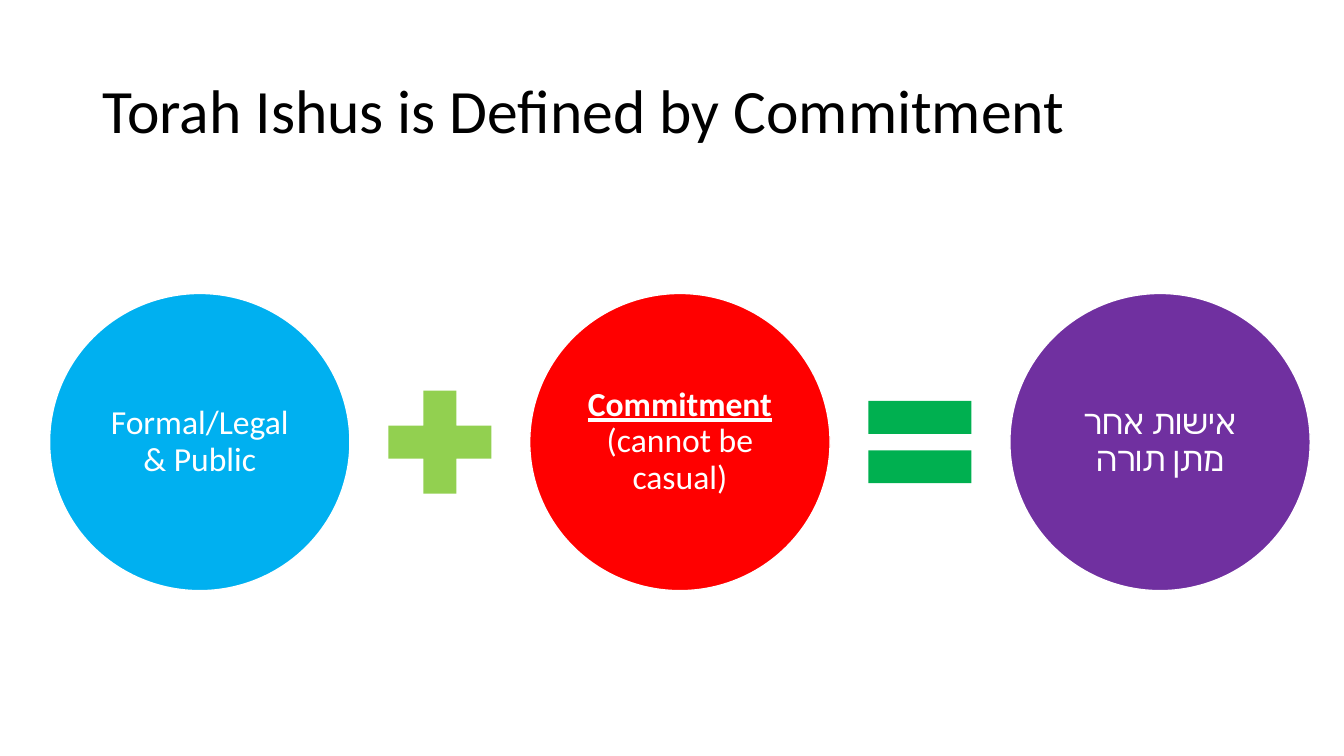
import pptx
import pptx.dml.color
import pptx.enum.shapes
import pptx.enum.text
import pptx.util
from lxml import etree
from pptx.oxml.ns import qn

Cm, Pt = pptx.util.Cm, pptx.util.Pt
RGBColor = pptx.dml.color.RGBColor
MSO_SHAPE = pptx.enum.shapes.MSO_SHAPE
PP_ALIGN = pptx.enum.text.PP_ALIGN
MSO_ANCHOR = pptx.enum.text.MSO_ANCHOR

BLACK = RGBColor(0x00, 0x00, 0x00)
WHITE = RGBColor(0xFF, 0xFF, 0xFF)
BLUE = RGBColor(0x00, 0xB0, 0xF0)
RED = RGBColor(0xFF, 0x00, 0x00)
PURPLE = RGBColor(0x70, 0x30, 0xA0)
LIME = RGBColor(0x92, 0xD0, 0x50)
GREEN = RGBColor(0x00, 0xB0, 0x50)

FONT = "Calibri"
FIRST_LEFT, PITCH = 1.25, 12.1
TERM_WIDTH, TERM_HEIGHT = 7.57, 7.49
SIGN_SIZE = 3.53
MIDDLE = 11.14


def format_run(run, size, color):
    run.font.name = FONT
    run.font.size = Pt(size)
    run.font.color.rgb = color


def add_part(kind, center, width, height, color):
    """Add a filled shape centred on the equation's middle line."""
    part = slide.shapes.add_shape(
        kind, Cm(center - width / 2), Cm(MIDDLE - height / 2), Cm(width), Cm(height))
    part.shadow.inherit = False
    part.fill.solid()
    part.fill.fore_color.rgb = color
    part.line.fill.background()
    return part


deck = pptx.Presentation()
deck.slide_width, deck.slide_height = Cm(33.87), Cm(19.05)
slide = deck.slides.add_slide(deck.slide_layouts[5])

title = slide.shapes.title
title.left, title.top, title.width, title.height = Cm(2.33), Cm(1.01), Cm(29.21), Cm(3.68)
title.text_frame.text = "Torah Ishus is Defined by Commitment"
title.text_frame.vertical_anchor = MSO_ANCHOR.MIDDLE
heading = title.text_frame.paragraphs[0]
heading.alignment = PP_ALIGN.LEFT
heading.line_spacing = 0.9
format_run(heading.runs[0], 44, BLACK)

terms = [
    (["Formal/Legal & Public"], BLUE),
    (["Commitment", " (cannot be casual)"], RED),
    (["אישות אחר מתן תורה"], PURPLE),
]
signs = [(MSO_SHAPE.MATH_PLUS, LIME), (MSO_SHAPE.MATH_EQUAL, GREEN)]

for index, (phrases, color) in enumerate(terms):
    center = FIRST_LEFT + TERM_WIDTH / 2 + index * PITCH
    term = add_part(MSO_SHAPE.OVAL, center, TERM_WIDTH, TERM_HEIGHT, color)
    term.line.color.rgb = WHITE
    term.line.width = Pt(1)

    frame = term.text_frame
    frame.word_wrap = True
    frame.vertical_anchor = MSO_ANCHOR.MIDDLE
    frame.margin_left = frame.margin_right = Cm(0.08)
    frame.margin_top = frame.margin_bottom = Cm(0.08)
    wording = frame.paragraphs[0]
    wording.alignment = PP_ALIGN.CENTER
    wording.line_spacing = 0.9
    wording._p.get_or_add_pPr().set("rtl", "1")
    for phrase in phrases:
        run = wording.add_run()
        run.text = phrase
        format_run(run, 24, WHITE)
        etree.SubElement(run._r.get_or_add_rPr(), qn("a:cs")).set("typeface", FONT)
    if len(phrases) > 1:
        wording.runs[0].font.bold = True
        wording.runs[0].font.underline = True

    if index < len(signs):
        sign, sign_color = signs[index]
        add_part(sign, center + PITCH / 2, SIGN_SIZE, SIGN_SIZE, sign_color)

deck.save("out.pptx")
